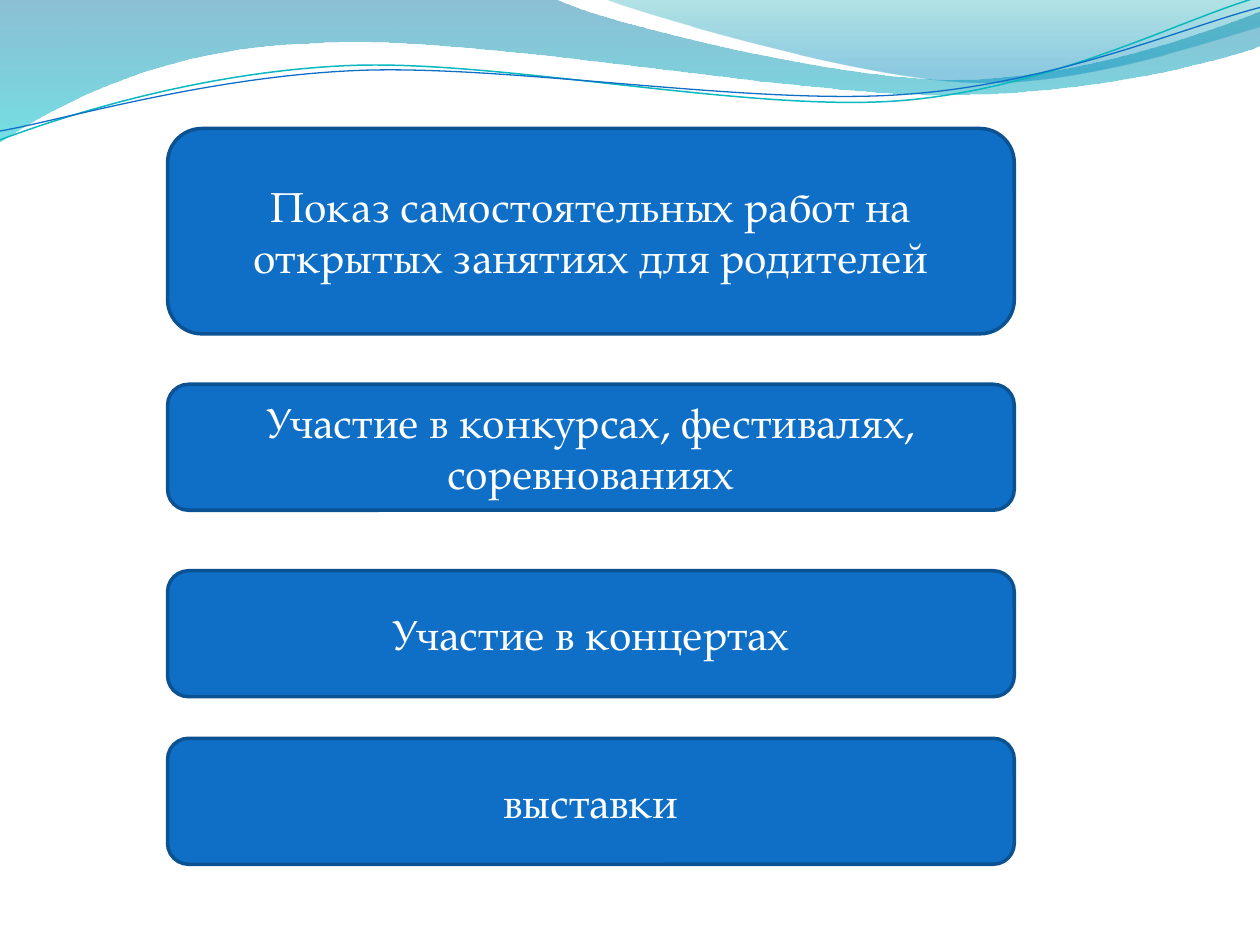
from math import cos, radians, sin

from lxml import etree
from pptx import Presentation
from pptx.dml.color import RGBColor
from pptx.enum import shapes, text
from pptx.oxml.ns import qn
from pptx.util import Inches, Pt

BLUE = RGBColor(0x0F, 0x6F, 0xC6)
EDGE = RGBColor(0x0B, 0x52, 0x92)
TEAL = RGBColor(0x0A, 0xB8, 0xBF)
WHITE = RGBColor(0xFF, 0xFF, 0xFF)
DEEP = RGBColor(0x00, 0x74, 0xA1)
AQUA = RGBColor(0x00, 0xC6, 0xCF)
SEA = RGBColor(0x00, 0xA1, 0xA9)
SKY = RGBColor(0x00, 0x8B, 0xBF)

LEFT, WIDTH = 1.33, 6.72
CARDS = [
    ("Показ самостоятельных работ на открытых занятиях для родителей", 1.02, 1.63),
    ("Участие в конкурсах, фестивалях, соревнованиях", 3.05, 1),
    ("Участие в концертах", 4.53, 1),
    ("выставки", 5.86, 1),
]
FONT = {"name": "TeX Gyre Pagella", "size": Pt(24)}
FRAME = {"word_wrap": True, "vertical_anchor": text.MSO_ANCHOR.MIDDLE}

BANDS = [
    ([
        [(0, 0)],
        [(4.4, -0.01)],
        [(4.76, 0.17), (6.64, 0.63), (7.58, 0.63)],
        [(8.53, 0.63), (9.58, 0.26), (10, 0.09)],
        [(10.01, 0.36)],
        [(9.83, 0.44), (8.7, 0.76), (7.46, 0.75)],
        [(6.22, 0.75), (3.82, 0.28), (2.57, 0.34)],
        [(1.29, 0.36), (0.46, 0.83), (-0.01, 1.13)],
        [(0, 0)],
    ], [(0, DEEP, 45), (1, AQUA, 55)]),
    ([
        [(4.79, -0.01)],
        [(5.09, 0.11), (6.82, 0.62), (7.69, 0.65)],
        [(8.56, 0.69), (9.61, 0.32), (10, 0.21)],
        [(10, 0)],
        [(4.79, -0.01)],
    ], [(0, SEA, 30), (0.8, SKY, 45)]),
]
TILT = 357.3
WAVES = [
    ([
        [(0, 1.11)],
        [(0.48, 0.93), (1.58, 0.57), (2.77, 0.52)],
        [(3.95, 0.47), (5.93, 0.89), (7.13, 0.8)],
        [(8.33, 0.71), (9.38, 0.15), (9.98, -0.02)],
    ], (4.99, 0.58), TEAL, 0.85),
    ([
        [(0, 1.04)],
        [(0.47, 0.96), (1.64, 0.61), (2.83, 0.56)],
        [(4.03, 0.51), (5.97, 0.84), (7.17, 0.75)],
        [(8.36, 0.67), (9.41, 0.21), (10, 0.06)],
    ], (5, 0.59), BLUE, 0.75),
]


def style(item, values):
    for key, value in values.items():
        setattr(item, key, value)


def level(dot, mid):
    turn = radians(-TILT)
    x, y = dot[0] - mid[0], dot[1] - mid[1]
    return (mid[0] + x * cos(turn) - y * sin(turn),
            mid[1] + x * sin(turn) + y * cos(turn))


def trace(slide, parts, close):
    dots = [(Inches(x), Inches(y)) for part in parts for x, y in part]
    pen = slide.shapes.build_freeform(*dots[0], scale=1.0)
    pen.add_line_segments(dots[1:], close=close)
    shape = pen.convert_to_shape()
    shape.shadow.inherit = False
    lines = iter(list(shape._element.iter(qn("a:lnTo"))))
    for part in parts[1:]:
        group = [next(lines) for _ in part]
        if len(group) == 3:
            curve = etree.Element(qn("a:cubicBezTo"))
            group[0].addprevious(curve)
            for line in group:
                curve.append(line[0])
                line.getparent().remove(line)
    return shape


def add_band(slide, parts, stops):
    shape = trace(slide, parts, True)
    shape.line.fill.background()
    shape.fill.gradient()
    shape.fill.gradient_angle = 270
    for stop, (place, color, _) in zip(shape.fill.gradient_stops, stops):
        stop.position = place
        stop.color.rgb = color
    tints = shape._element.spPr.iter(qn("a:srgbClr"))
    for tint, (_, _, alpha) in zip(tints, stops):
        etree.SubElement(tint, qn("a:alpha"), val=str(alpha * 1000))


def add_wave(slide, parts, mid, color, width):
    flat = [[level(dot, mid) for dot in part] for part in parts]
    shape = trace(slide, flat, False)
    shape.rotation = TILT
    shape.fill.background()
    shape.line.color.rgb = color
    shape.line.width = Pt(width)


def add_card(slide, words, top, height):
    box = [Inches(v) for v in (LEFT, top, WIDTH, height)]
    card = slide.shapes.add_shape(shapes.MSO_SHAPE.ROUNDED_RECTANGLE, *box)
    card.shadow.inherit = False
    card.fill.solid()
    card.fill.fore_color.rgb = BLUE
    card.line.color.rgb = EDGE
    card.line.width = Pt(2)
    style(card.text_frame, FRAME)
    para = card.text_frame.paragraphs[0]
    para.alignment = text.PP_ALIGN.CENTER
    run = para.add_run()
    run.text = words
    style(run.font, FONT)
    run.font.color.rgb = WHITE


def main():
    deck = Presentation()
    style(deck, {"slide_width": Inches(10), "slide_height": Inches(7.5)})
    slide = deck.slides.add_slide(deck.slide_layouts[6])
    for band in BANDS:
        add_band(slide, *band)
    for wave in WAVES:
        add_wave(slide, *wave)
    for card in CARDS:
        add_card(slide, *card)
    deck.save("out.pptx")


if __name__ == "__main__":
    main()
